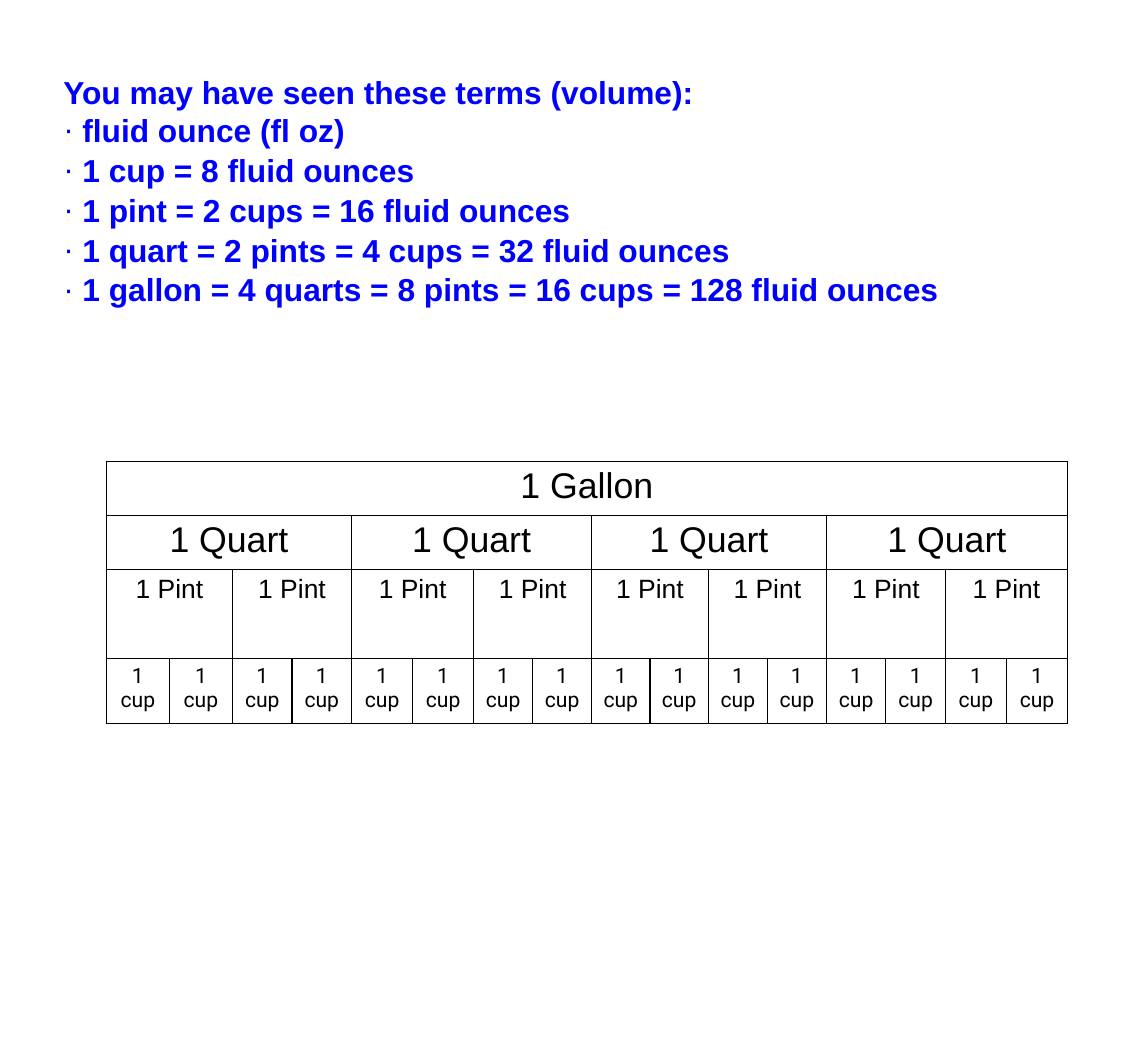
from lxml import etree
from pptx import Presentation
from pptx import util as u
from pptx.dml import color
from pptx.enum import text
from pptx.oxml import ns

BLUE = color.RGBColor(0x00, 0x00, 0xFF)
BLACK = color.RGBColor(0x00, 0x00, 0x00)
WHITE = color.RGBColor(0xFF, 0xFF, 0xFF)

HEAD = "You may have seen these terms (volume):"
TERMS = [
    "fluid ounce (fl oz)",
    "1 cup = 8 fluid ounces",
    "1 pint = 2 cups = 16 fluid ounces",
    "1 quart = 2 pints = 4 cups = 32 fluid ounces",
    "1 gallon = 4 quarts = 8 pints = 16 cups = 128 fluid ounces",
]
PINTS = [3.37, 3.18, 3.26, 3.15, 3.12, 3.15, 3.18, 3.26]
CUPS = 2 * len(PINTS)
ROWS = [
    ("1 Gallon", 16, 27, "Arial", 1.44),
    ("1 Quart", 4, 27, "Arial", 1.44),
    ("1 Pint", 2, 20, "Arial", 2.39),
    ("1 cup", 1, 16, "Roboto", 1.72),
]


def style(para, size, face, ink, bold=False):
    for run in para.runs:
        run.font.size = u.Pt(size)
        run.font.name = face
        run.font.bold = bold
        run.font.color.rgb = ink


def place(holder, top, height, lines):
    holder.left, holder.top = u.Cm(1.42), u.Cm(top)
    holder.width, holder.height = u.Cm(28.37), u.Cm(height)
    frame = holder.text_frame
    frame.text = "\n".join(lines)
    frame.word_wrap = True
    frame.auto_size = text.MSO_AUTO_SIZE.NONE
    frame.vertical_anchor = text.MSO_ANCHOR.TOP
    frame.margin_left = frame.margin_right = u.Cm(0.27)
    frame.margin_top = frame.margin_bottom = 0
    for para in frame.paragraphs:
        para.alignment = text.PP_ALIGN.LEFT
        para.line_spacing = 1.05
        para.space_before = para.space_after = u.Pt(0)
        style(para, 24, "Arial", BLUE, True)


def bullet(para):
    props = para._p.get_or_add_pPr()
    props.set("marL", str(u.Cm(0.51)))
    props.set("indent", str(-u.Cm(0.51)))
    etree.SubElement(props, ns.qn("a:buFont"), typeface="Arial")
    etree.SubElement(props, ns.qn("a:buChar"), char="·")


def border(cell):
    props = cell._tc.get_or_add_tcPr()
    for side in ("lnL", "lnR", "lnT", "lnB"):
        line = etree.SubElement(props, ns.qn("a:" + side), w=str(u.Pt(1)))
        fill = etree.SubElement(line, ns.qn("a:solidFill"))
        etree.SubElement(fill, ns.qn("a:srgbClr"), val=str(BLACK))


def label(cell, words, size, face):
    cell.text = words
    para = cell.text_frame.paragraphs[0]
    para.alignment = text.PP_ALIGN.CENTER
    style(para, size, face, BLACK)


def chart(slide):
    frame = slide.shapes.add_table(
        len(ROWS), CUPS, u.Cm(2.84), u.Cm(12.32),
        u.Cm(sum(PINTS)), u.Cm(sum(row[-1] for row in ROWS)))
    grid = frame.table
    grid.first_row = grid.horz_banding = False
    for i, col in enumerate(grid.columns):
        col.width = u.Cm(PINTS[i // 2] / 2)
    for r, (words, span, size, face, height) in enumerate(ROWS):
        grid.rows[r].height = u.Cm(height)
        for c in range(CUPS):
            cell = grid.cell(r, c)
            border(cell)
            cell.fill.solid()
            cell.fill.fore_color.rgb = WHITE
            cell.margin_left = cell.margin_right = u.Cm(0.27)
            cell.margin_top = cell.margin_bottom = u.Cm(0.13)
        for c in range(0, CUPS, span):
            cell = grid.cell(r, c)
            if span > 1:
                cell.merge(grid.cell(r, c + span - 1))
            label(cell, words, size, face)


def main():
    """Build the slide on units of volume."""
    deck = Presentation()
    deck.slide_width, deck.slide_height = u.Cm(30.66), u.Cm(28.22)
    slide = deck.slides.add_slide(deck.slide_layouts[1])
    title, body = slide.placeholders
    place(title, 1.88, 1.02, [HEAD])
    place(body, 2.9, 5.28, TERMS)
    for para in body.text_frame.paragraphs:
        bullet(para)
    chart(slide)
    deck.save("out.pptx")


if __name__ == "__main__":
    main()
